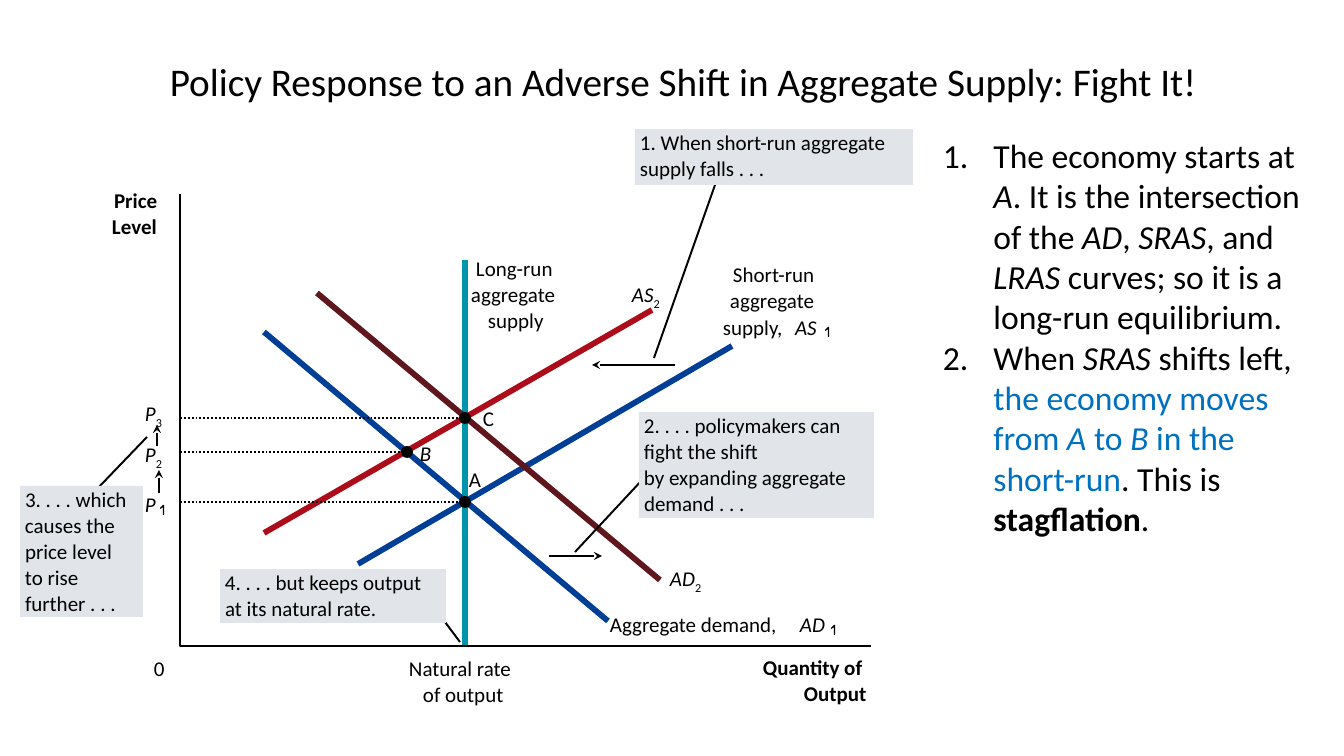
"""Builds the aggregate supply and demand slide on fighting an adverse supply shift."""
from lxml import etree
from pptx import Presentation
from pptx.dml.color import RGBColor
from pptx.enum.dml import MSO_LINE
from pptx.enum.shapes import MSO_CONNECTOR, MSO_SHAPE
from pptx.enum.text import MSO_ANCHOR, MSO_AUTO_SIZE, PP_ALIGN
from pptx.oxml.ns import qn
from pptx.util import Pt

STRAIGHT, DOTTED = MSO_CONNECTOR.STRAIGHT, MSO_LINE.ROUND_DOT
RECTANGLE, OVAL = MSO_SHAPE.RECTANGLE, MSO_SHAPE.OVAL
LEFT, CENTER = PP_ALIGN.LEFT, PP_ALIGN.CENTER
TOP, MIDDLE = MSO_ANCHOR.TOP, MSO_ANCHOR.MIDDLE
FIT_TEXT, FIXED = MSO_AUTO_SIZE.SHAPE_TO_FIT_TEXT, MSO_AUTO_SIZE.NONE

BLACK = RGBColor(0x00, 0x00, 0x00)
GRAY = RGBColor(0xE1, 0xE5, 0xE9)
TEAL = RGBColor(0x00, 0x94, 0xAC)
BLUE = RGBColor(0x00, 0x3F, 0x95)
RED = RGBColor(0xAD, 0x0D, 0x1B)
MAROON = RGBColor(0x5F, 0x16, 0x1D)
HIGHLIGHT = RGBColor(0x00, 0x70, 0xC0)

SCALE = 914400 / 100.8
FONT = "Calibri"
THIN, THICK = 1.38, 4.13
LINE_PITCH, LINE_HEIGHT = 26, 25
DOT_SIZE = 12

TITLE = "Policy Response to an Adverse Shift in Aggregate Supply: Fight It!"

# Run styles: i italic, b bold, s subscript, h highlighted
EXPLANATION = [
    [("The economy starts at ", ""), ("A", "i"), (". It is the intersection of the ", ""),
     ("AD", "i"), (", ", ""), ("SRAS", "i"), (", and ", ""), ("LRAS", "i"),
     (" curves; so it is a long-run equilibrium.", "")],
    [("When ", ""), ("SRAS", "i"), (" shifts left, ", ""),
     ("the economy moves from ", "h"), ("A", "hi"), (" to ", "h"), ("B", "hi"),
     (" in the short-run", "h"), (". This is ", ""), ("stagflation", "b"), (".", "")],
]

AXES = [(180, 194), (180, 646), (871, 646)]
CURVES = [
    ((465, 260), (465, 646), TEAL),
    ((608, 621), (264, 332), BLUE),
    ((358, 564), (732, 346), BLUE),
    ((264, 533), (652, 310), RED),
    ((660, 580), (317, 293), MAROON),
]
SHIFT_ARROWS = [
    ((675, 365), (592, 365)),
    ((549, 556), (602, 556)),
    ((159, 493), (159, 470)),
    ((157, 446), (157, 425)),
]
EQUILIBRIA = [(465, 502), (407, 452), (465, 418)]

LABELS = [
    (763, 655, 101, [("Quantity of", "b")]),
    (804, 681, 65, [("Output", "b")]),
    (409, 656, 104, [("Natural rate", "")]),
    (423, 682, 82, [("of output", "")]),
    (114, 188, 46, [("Price", "b")]),
    (112, 214, 47, [("Level", "b")]),
    (154, 656, 12, [("0", "")]),
    (733, 262, 83, [("Short-run", "")]),
    (730, 288, 86, [("aggregate", "")]),
    (723, 315, 66, [("supply,", "")]),
    (795, 315, 24, [("AS", "i")]),
    (476, 256, 79, [("Long-run", "")]),
    (471, 282, 86, [("aggregate", "")]),
    (488, 308, 58, [("supply", "")]),
    (610, 612, 173, [("Aggregate demand,", "")]),
    (800, 612, 28, [("AD", "i")]),
    (632, 282, 31, [("AS", "i"), ("2", "s")]),
    (670, 566, 34, [("AD", "i"), ("2", "s")]),
    (145, 492, 13, [("P", "i")]),
    (145, 442, 20, [("P", "i"), ("2", "s")]),
    (145, 401, 20, [("P", "i"), ("3", "s")]),
    (469, 467, 14, [("A", "")]),
    (420, 441, 13, [("B", "i")]),
    (483, 406, 13, [("C", "")]),
]
SUBSCRIPT_ONES = [(825, 327), (831, 625), (160, 505)]
ONE_OUTLINE = [(4, 0), (3, 0), (2, 1), (0, 3), (0, 4), (2, 3), (3, 2), (3, 10), (4, 10)]

CALLOUTS = [
    ((20, 486, 123, 131), (147, 437), (74, 513),
     [("3. . . . which", 104), ("causes the", 92), ("price level", 94),
      ("to rise", 60), ("further . . .", 93)]),
    ((220, 569, 226, 54), (460, 642), (424, 594),
     [("4. . . . but keeps output", 200), ("at its natural rate.", 153)]),
    ((639, 412, 235, 106), (575, 552), (644, 478),
     [("2. . . . policymakers can", 200), ("fight the shift", 117),
      ("by expanding aggregate", 205), ("demand . . .", 103)]),
    ((635, 129, 278, 56), (654, 358), (721, 168),
     [("1. When short-run aggregate", 249), ("supply falls . . .", 127)]),
]


def px(*lengths):
    return [round(length * SCALE) for length in lengths]


def add_text(slide, box, paragraphs, size=15, align=LEFT, anchor=TOP, inset=(0, 0),
             wrap=False, spacing=None, numbered=False):
    frame = slide.shapes.add_textbox(*px(*box)).text_frame
    frame.word_wrap, frame.vertical_anchor = wrap, anchor
    frame.auto_size = FIXED if wrap else FIT_TEXT
    frame.margin_left, frame.margin_top = frame.margin_right, frame.margin_bottom = px(*inset)
    for index, runs in enumerate(paragraphs):
        paragraph = frame.paragraphs[0] if index == 0 else frame.add_paragraph()
        paragraph.alignment = align
        if spacing:
            paragraph.line_spacing = spacing
        if numbered:
            properties = paragraph._p.get_or_add_pPr()
            properties.set("marL", "457200")
            properties.set("indent", "-457200")
            etree.SubElement(properties, qn("a:buFont"), typeface="+mj-lt")
            etree.SubElement(properties, qn("a:buAutoNum"), type="arabicPeriod")
        for words, style in runs:
            run = paragraph.add_run()
            run.text = words
            font = run.font
            font.name, font.size = FONT, Pt(size)
            font.bold, font.italic = "b" in style, "i" in style
            font.color.rgb = HIGHLIGHT if "h" in style else BLACK
            if "s" in style:
                run._r.get_or_add_rPr().set("baseline", "-25000")


def add_line(slide, start, end, color=BLACK, width=THIN, dash=None, arrow=False):
    connector = slide.shapes.add_connector(STRAIGHT, *px(*start, *end))
    connector.line.color.rgb, connector.line.width = color, Pt(width)
    if dash:
        connector.line.dash_style = dash
    if arrow:
        etree.SubElement(connector.line._get_or_add_ln(), qn("a:tailEnd"), type="stealth")
    etree.SubElement(connector._element.spPr, qn("a:effectLst"))


def fill_shape(shape, color):
    shape.shadow.inherit = False
    shape.fill.solid()
    shape.fill.fore_color.rgb = color
    shape.line.fill.background()


def add_graph(slide):
    for start, end, color in CURVES:
        add_line(slide, start, end, color, THICK)
    builder = slide.shapes.build_freeform(*AXES[0], scale=SCALE)
    builder.add_line_segments(AXES[1:], close=False)
    axes = builder.convert_to_shape()
    axes.shadow.inherit = False
    axes.fill.background()
    axes.line.color.rgb, axes.line.width = BLACK, Pt(THIN)
    for start, end in SHIFT_ARROWS:
        add_line(slide, start, end, arrow=True)
    for x, y in EQUILIBRIA:
        add_line(slide, (AXES[0][0], y), (x, y), dash=DOTTED)
        corner = (x - DOT_SIZE / 2, y - DOT_SIZE / 2)
        fill_shape(slide.shapes.add_shape(OVAL, *px(*corner, DOT_SIZE, DOT_SIZE)), BLACK)
    for x, y, width, runs in LABELS:
        add_text(slide, (x, y, width, LINE_HEIGHT), [runs])
    for origin in SUBSCRIPT_ONES:
        builder = slide.shapes.build_freeform(*ONE_OUTLINE[0], scale=SCALE)
        builder.add_line_segments(ONE_OUTLINE[1:], close=True)
        fill_shape(builder.convert_to_shape(*px(*origin)), BLACK)


def add_callouts(slide):
    for box, target, anchor, lines in CALLOUTS:
        add_line(slide, target, anchor)
        fill_shape(slide.shapes.add_shape(RECTANGLE, *px(*box)), GRAY)
        for row, (words, width) in enumerate(lines):
            top = box[1] + 1 + row * LINE_PITCH
            add_text(slide, (box[0] + 5, top, width, LINE_HEIGHT), [[(words, "")]])


def main():
    deck = Presentation()
    deck.slide_width, deck.slide_height = px(1344, 756)
    slide = deck.slides.add_slide(deck.slide_layouts[6])
    add_graph(slide)
    add_callouts(slide)
    add_text(slide, (933, 130, 386, 460), EXPLANATION, size=24, inset=(10, 5),
             wrap=True, numbered=True)
    add_text(slide, (67, 17, 1232, 134), [[(TITLE, "")]], size=28, align=CENTER,
             anchor=MIDDLE, inset=(10, 5), wrap=True, spacing=0.9)
    deck.save("out.pptx")


if __name__ == "__main__":
    main()
